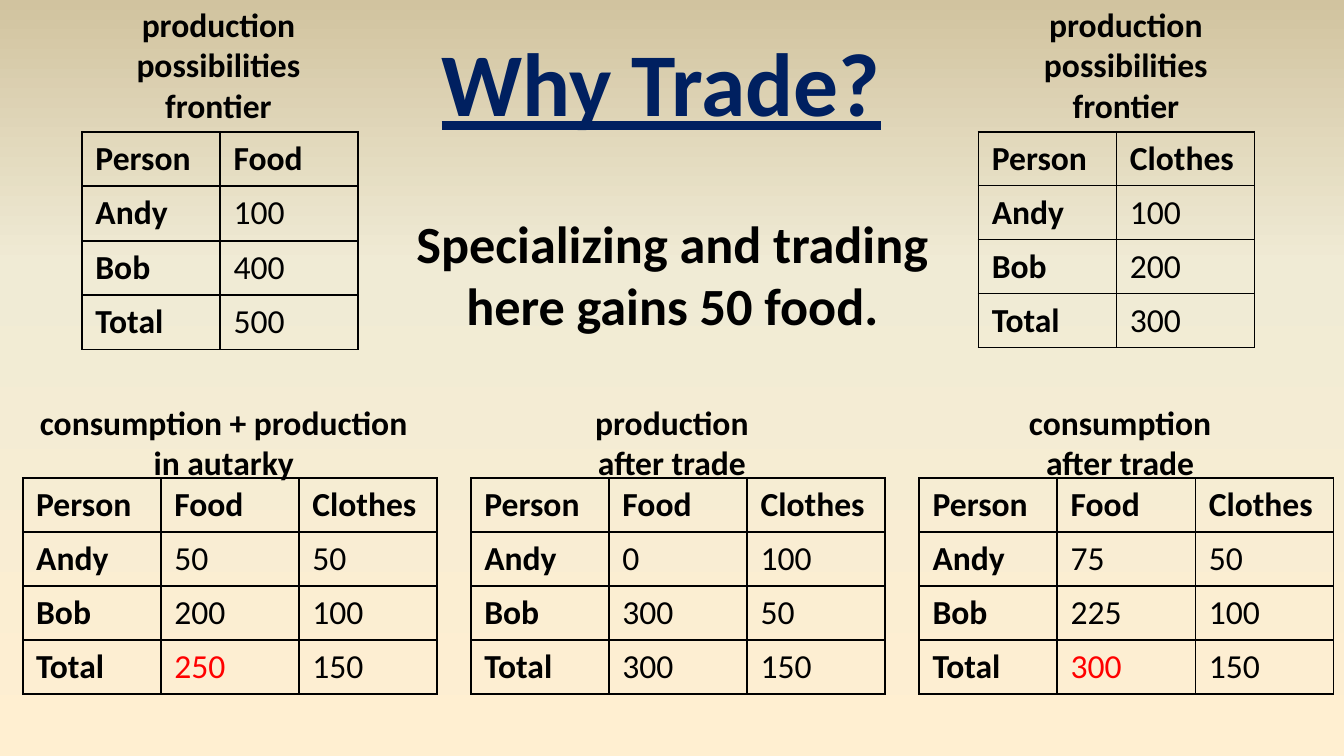
from lxml.etree import SubElement
from pptx import Presentation
from pptx.dml.color import RGBColor
from pptx.enum.text import MSO_ANCHOR, MSO_AUTO_SIZE, PP_ALIGN
from pptx.oxml.ns import qn
from pptx.util import Cm, Pt

BLACK, NAVY, RED = "000000", "002060", "FF0000"


def rgb(hex_color):
    return RGBColor.from_string(hex_color)


def add_color(parent, hex_color):
    SubElement(parent, qn("a:srgbClr"), val=str(rgb(hex_color)))


class TradeSlide:
    font_name = "Calibri"
    body_size = 18
    column_width = 2.61
    row_height = 1.02

    def __init__(self, deck):
        self.slide = deck.slides.add_slide(deck.slide_layouts[5])

    def background(self, stops):
        """Fill from bottom to top with (percent, colour) stops."""
        fill = self.slide.background.fill
        fill.gradient()
        fill.gradient_angle = 90
        stop_list = self.slide.element.find(".//" + qn("a:gsLst"))
        for old_stop in list(stop_list):
            stop_list.remove(old_stop)
        for percent, color in stops:
            stop = SubElement(stop_list, qn("a:gs"), pos=str(percent * 1000))
            add_color(stop, color)

    def add_text(self, paragraph, text, size=body_size, color=BLACK, bold=True, underline=None):
        run = paragraph.add_run()
        run.text = text
        font = run.font
        font.name, font.size, font.bold = self.font_name, Pt(size), bold
        font.underline = underline
        font.color.rgb = rgb(color)

    def title(self, text, left, top, width, height):
        heading = self.slide.shapes.title
        heading.left, heading.top = Cm(left), Cm(top)
        heading.width, heading.height = Cm(width), Cm(height)
        frame = heading.text_frame
        frame.word_wrap = False
        frame.auto_size = MSO_AUTO_SIZE.NONE
        frame.vertical_anchor = MSO_ANCHOR.TOP
        paragraph = frame.paragraphs[0]
        paragraph.alignment = PP_ALIGN.CENTER
        self.add_text(paragraph, text, 48, NAVY, underline=True)

    def caption(self, lines, left, top, width, height, size=body_size):
        box = self.slide.shapes.add_textbox(Cm(left), Cm(top), Cm(width), Cm(height))
        frame = box.text_frame
        frame.word_wrap = True
        for index, line in enumerate(lines):
            paragraph = frame.add_paragraph() if index else frame.paragraphs[0]
            paragraph.alignment = PP_ALIGN.CENTER
            self.add_text(paragraph, line, size)

    def border(self, cell):
        properties = cell._tc.get_or_add_tcPr()
        for index, side in enumerate(("a:lnL", "a:lnR", "a:lnT", "a:lnB")):
            line = SubElement(properties, qn(side), w=str(int(Pt(1))))
            add_color(SubElement(line, qn("a:solidFill")), BLACK)
            properties.insert(index, line)

    def table(self, goods, amounts, left, top, highlight=None):
        """Tabulate amounts per person; highlight is a (row, column) shown in red."""
        rows = [("Person", *goods)]
        rows += [(person, *row) for person, row in zip(("Andy", "Bob"), amounts)]
        rows.append(("Total", *(sum(column) for column in zip(*amounts))))
        column_count = len(rows[0])
        table = self.slide.shapes.add_table(
            len(rows), column_count, Cm(left), Cm(top),
            Cm(self.column_width * column_count), Cm(self.row_height * len(rows))).table
        table.first_row = table.horz_banding = False
        for column in table.columns:
            column.width = Cm(self.column_width)
        for r, row in enumerate(rows):
            table.rows[r].height = Cm(self.row_height)
            for c, value in enumerate(row):
                cell = table.cell(r, c)
                cell.fill.background()
                self.border(cell)
                color = RED if (r, c) == highlight else BLACK
                self.add_text(cell.text_frame.paragraphs[0], str(value),
                              color=color, bold=r == 0 or c == 0)


def main():
    deck = Presentation()
    deck.slide_width, deck.slide_height = Cm(25.4), Cm(14.29)
    page = TradeSlide(deck)
    page.background([(0, "FFEFD1"), (65, "F0EBD5"), (100, "D1C39F")])
    page.title("Why Trade?", 8.05, 0.38, 8.89, 2.31)

    frontiers = [
        ("Food", [(100,), (400,)], 1.55, 1.69),
        ("Clothes", [(100,), (200,)], 18.49, 18.84),
    ]
    for good, amounts, table_left, caption_left in frontiers:
        page.table((good,), amounts, table_left, 2.49)
        page.caption(("production", "possibilities", "frontier"),
                     caption_left, -0.05, 4.88, 2.57)

    page.caption(("Specializing and trading", "here gains 50 food."),
                 7.41, 3.86, 10.59, 2.64, size=28)

    food_total = (3, 1)
    outcomes = [
        (("consumption + production", "in autarky"), [(50, 50), (200, 100)], food_total),
        (("production", "after trade"), [(0, 100), (300, 50)], None),
        (("consumption", "after trade"), [(75, 50), (225, 100)], food_total),
    ]
    for index, (lines, amounts, highlight) in enumerate(outcomes):
        offset = 8.47 * index
        page.table(("Food", "Clothes"), amounts, 0.43 + offset, 9.04, highlight)
        page.caption(lines, 0.21 + offset, 7.47, 8.04, 1.8)

    deck.save("out.pptx")


if __name__ == "__main__":
    main()
